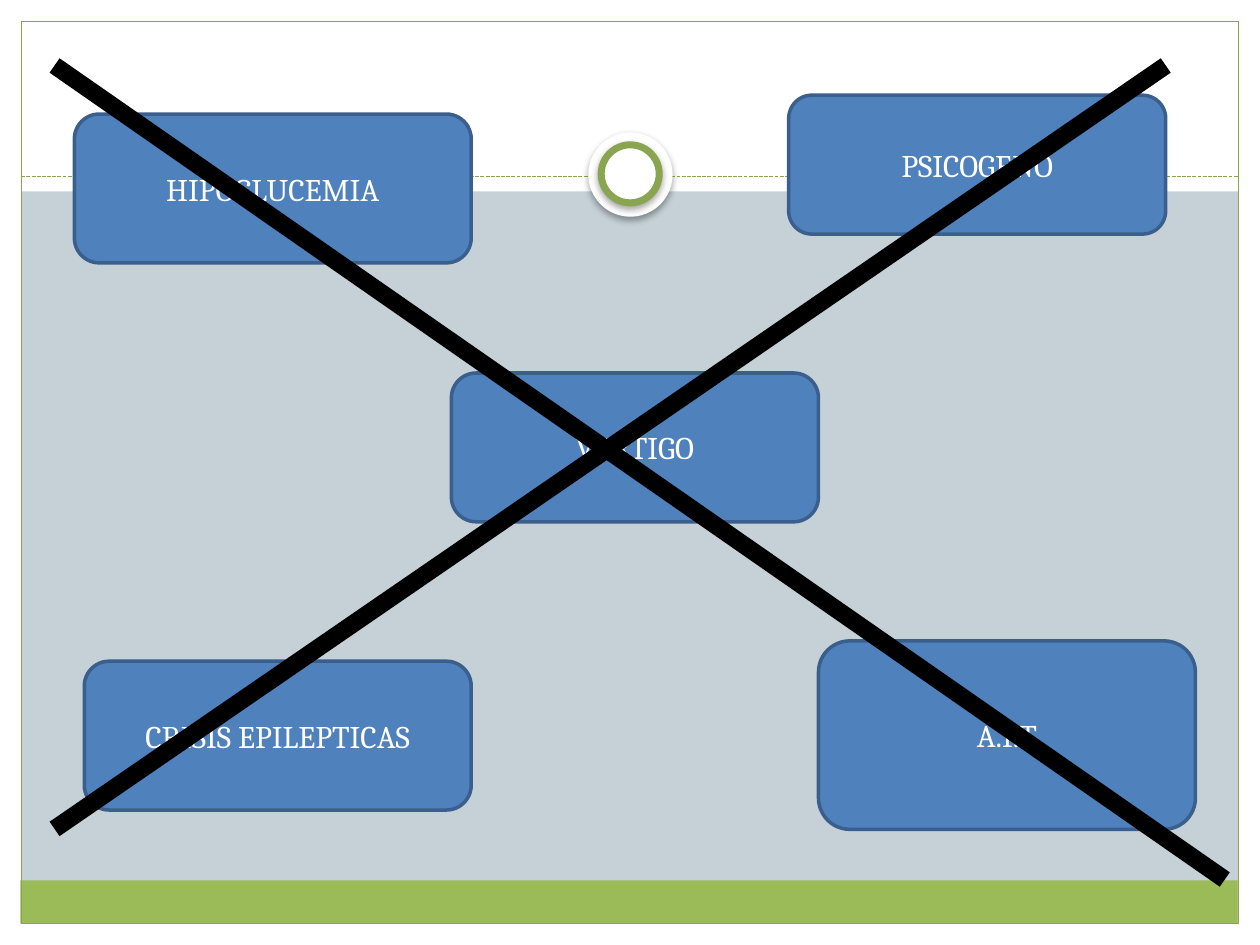
import pptx
import pptx.util
import pptx.dml.color
import pptx.enum.dml
import pptx.enum.shapes
import pptx.enum.text
import pptx.oxml
import pptx.oxml.ns

Cm = pptx.util.Cm
Pt = pptx.util.Pt
Kind = pptx.enum.shapes.MSO_SHAPE
WHITE, GREEN, DARK_GREEN = "FFFFFF", "9BBB59", "89A54F"

deck = pptx.Presentation()
deck.slide_width, deck.slide_height = Cm(25.4), Cm(19.05)
page = deck.slides.add_slide(deck.slide_layouts[6])


def paint(target, color):
    """Give a fill or a font a solid colour."""
    if hasattr(target, "solid"):
        target.solid()
        target = target.fore_color
    else:
        target = target.color
    target.rgb = pptx.dml.color.RGBColor.from_string(color)


def add_shape(kind, place, fill=None, line=None, width=0):
    shape = page.shapes.add_shape(kind, *[Cm(length) for length in place])
    if fill:
        paint(shape.fill, fill)
    else:
        shape.fill.background()
    if line:
        paint(shape.line.fill, line)
        shape.line.width = Pt(width)
    else:
        shape.line.fill.background()
    shape.shadow.inherit = False
    return shape


# Background, white margins and green footer band
paint(page.background.fill, "C5D1D7")
for place in [(0, 18.62, 25.4, 0.43), (0, 0, 25.4, 3.86),
              (0, 0, 0.43, 19.05), (24.97, 0, 0.43, 19.05)]:
    add_shape(Kind.RECTANGLE, place, WHITE)
add_shape(Kind.RECTANGLE, (0.41, 17.75, 24.54, 0.87), GREEN)
add_shape(Kind.RECTANGLE, (0.43, 0.43, 24.54, 18.19), None, DARK_GREEN, 0.75)

# Lines: the dashed rule now, the big cross after the boxes
rule = [((0.43, 3.56), (24.97, 3.56), DARK_GREEN, 0.75, True)]
cross = [((1.1, 1.32), (24.69, 17.73), "000000", 10, False),
         ((23.5, 1.32), (1.1, 16.71), "000000", 10, False)]
boxes = [
    ("HIPOGLUCEMIA", (1.5, 2.3, 8, 3)),
    ("CRISIS EPILEPTICAS", (1.7, 13.33, 7.8, 3)),
    ("PSICOGENO", (15.9, 1.92, 7.6, 2.8)),
    ("VERTIGO", (9.1, 7.52, 7.4, 3)),
    ("A.I.T", (16.5, 12.92, 7.6, 3.8)),
]
for lines in (rule, cross):
    if lines is cross:
        # Round medallion on the rule
        for place, line, width in [((11.86, 2.67, 1.7, 1.7), None, 0),
                                   ((12.12, 2.92, 1.17, 1.17), DARK_GREEN, 4)]:
            disc = add_shape(Kind.OVAL, place, WHITE, line, width)
            effects = disc._element.spPr.find(pptx.oxml.ns.qn("a:effectLst"))
            effects.append(pptx.oxml.parse_xml(
                f'<a:outerShdw {pptx.oxml.ns.nsdecls("a")} blurRad="50800" '
                'dist="25400" dir="5400000" rotWithShape="0">'
                '<a:srgbClr val="000000"><a:alpha val="35000"/></a:srgbClr>'
                '</a:outerShdw>'))

        # Diagnosis boxes
        for label, place in boxes:
            box = add_shape(Kind.FLOWCHART_ALTERNATE_PROCESS, place,
                            "4F81BD", "3A5F8C", 2)
            box.text_frame.word_wrap = True
            box.text_frame.vertical_anchor = pptx.enum.text.MSO_ANCHOR.MIDDLE
            para = box.text_frame.paragraphs[0]
            para.alignment = pptx.enum.text.PP_ALIGN.CENTER
            span = para.add_run()
            span.text = label
            span.font.name = "Cambria"
            span.font.size = Pt(18)
            paint(span.font, WHITE)

    for start, end, color, width, dashed in lines:
        stroke = page.shapes.add_connector(
            pptx.enum.shapes.MSO_CONNECTOR.STRAIGHT,
            *[Cm(length) for length in start + end])
        paint(stroke.line.fill, color)
        stroke.line.width = Pt(width)
        if dashed:
            stroke.line.dash_style = pptx.enum.dml.MSO_LINE.SQUARE_DOT
        stroke._element.spPr.append(pptx.oxml.parse_xml(
            f'<a:effectLst {pptx.oxml.ns.nsdecls("a")}/>'))

deck.save("out.pptx")
